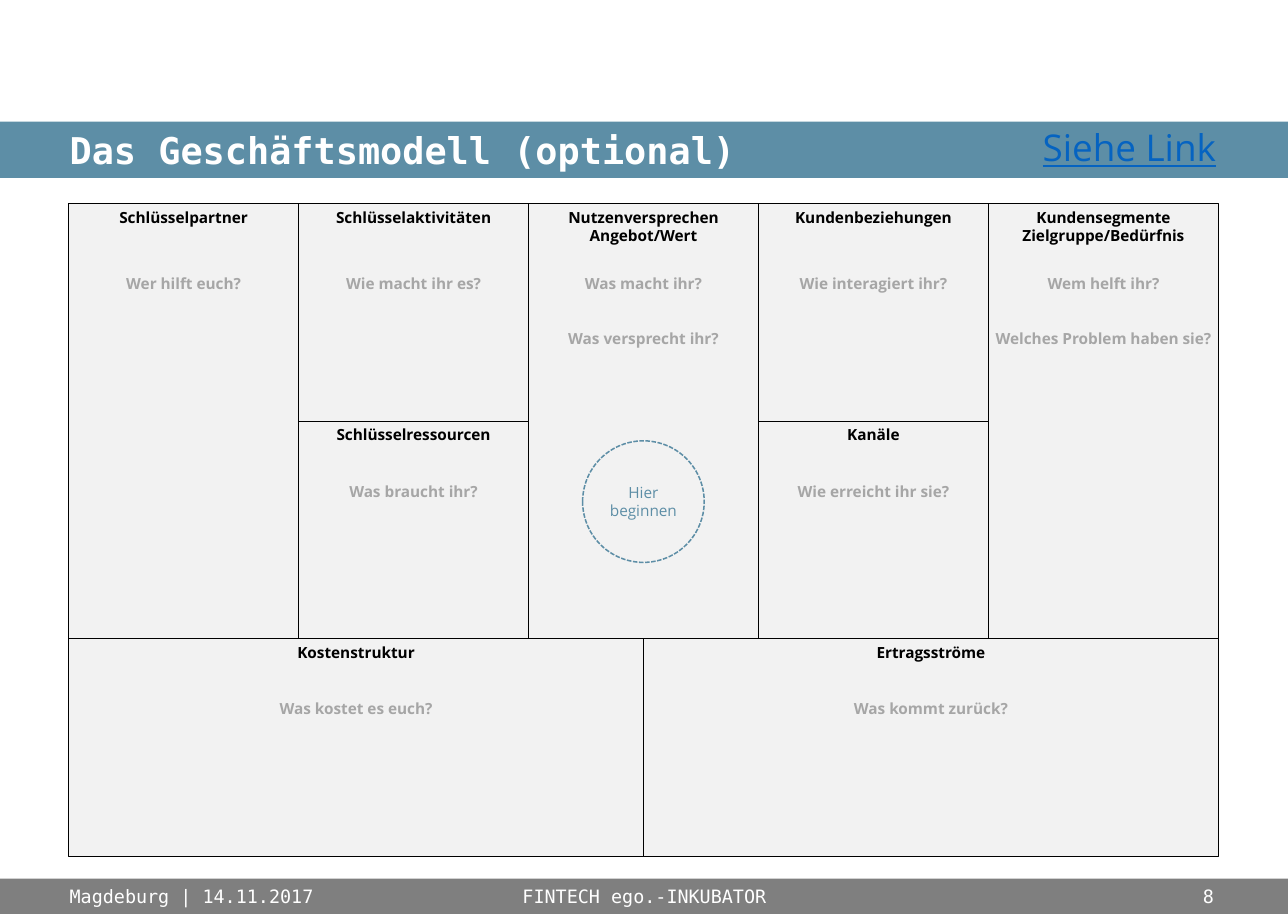
from dataclasses import dataclass
from pptx import Presentation
from pptx.dml.color import RGBColor
from pptx.enum.dml import MSO_LINE
from pptx.enum.shapes import MSO_SHAPE
from pptx.enum.text import MSO_ANCHOR, PP_ALIGN
from pptx.util import Inches, Pt

TITLE = "Das Geschäftsmodell (optional)"
LINK = "Siehe Link"
START = "Hier beginnen"
FOOTER = [
    ("Magdeburg | 14.11.2017", 0.63, 2.71, PP_ALIGN.LEFT),
    ("FINTECH ego.-INKUBATOR", 4.26, 3.14, PP_ALIGN.CENTER),
    ("8", 10.2, 0.78, PP_ALIGN.RIGHT),
]
# column, row, column span, row span, headings, prompts
CANVAS = [
    (0, 0, 1, 2, ["Schlüsselpartner"], ["Wer hilft euch?"]),
    (1, 0, 1, 1, ["Schlüsselaktivitäten"], ["Wie macht ihr es?"]),
    (2, 0, 1, 2, ["Nutzenversprechen", "Angebot/Wert"],
     ["Was macht ihr?", "Was versprecht ihr?"]),
    (3, 0, 1, 1, ["Kundenbeziehungen"], ["Wie interagiert ihr?"]),
    (4, 0, 1, 2, ["Kundensegmente", "Zielgruppe/Bedürfnis"],
     ["Wem helft ihr?", "Welches Problem haben sie?"]),
    (1, 1, 1, 1, ["Schlüsselressourcen"], ["Was braucht ihr?"]),
    (3, 1, 1, 1, ["Kanäle"], ["Wie erreicht ihr sie?"]),
    (0, 2, 2.5, 1, ["Kostenstruktur"], ["Was kostet es euch?"]),
    (2.5, 2, 2.5, 1, ["Ertragsströme"], ["Was kommt zurück?"]),
]


@dataclass(frozen=True)
class Theme:
    mono: str = "DejaVu Sans Mono"
    sans: str = "Open Sans"
    blue: str = "5D8EA6"
    gray: str = "7F7F7F"
    panel: str = "F2F2F2"
    prompt: str = "A6A6A6"
    link: str = "0563C1"
    black: str = "000000"
    white: str = "FFFFFF"
    large: int = 24
    medium: int = 12
    small: int = 10


T = Theme()
W, H = 11.65, 8.27
LEFT, TOP, COL, ROW = 0.62, 1.84, 2.08, 1.97
BAR_TOP, BAR_H = 1.1, 0.51
FOOT_H = 0.32
PAD, PROMPT_H, CIRCLE = 0.04, 0.98, 1.1

prs = Presentation()
prs.slide_width, prs.slide_height = Inches(W), Inches(H)
s = prs.slides.add_slide(prs.slide_layouts[6])


def box(at, fill=None, line=None, width=0.5, shape=MSO_SHAPE.RECTANGLE):
    sp = s.shapes.add_shape(shape, *map(Inches, at))
    sp.shadow.inherit = False
    if fill:
        sp.fill.solid()
        sp.fill.fore_color.rgb = RGBColor.from_string(fill)
    else:
        sp.fill.background()
    if line:
        sp.line.color.rgb = RGBColor.from_string(line)
        sp.line.width = Pt(width)
    else:
        sp.line.fill.background()
    return sp


def label(at):
    return s.shapes.add_textbox(*map(Inches, at))


def write(sp, lines, color, size, name, align=PP_ALIGN.CENTER, anchor=MSO_ANCHOR.TOP,
          insets=(0, 0, 0, 0), spacing=None, gap=0, **style):
    tf = sp.text_frame
    tf.word_wrap = True
    tf.vertical_anchor = anchor
    for side, inset in zip(("left", "top", "right", "bottom"), insets):
        setattr(tf, f"margin_{side}", Inches(inset))
    for i, line in enumerate(lines):
        p = tf.add_paragraph() if i else tf.paragraphs[0]
        p.alignment = align
        if spacing:
            p.line_spacing = Pt(spacing)
        if i and gap:
            p.space_before = Pt(gap)
        r = p.add_run()
        r.text = line
        r.font.color.rgb = RGBColor.from_string(color)
        for key, value in {"size": Pt(size), "name": name, **style}.items():
            setattr(r.font, key, value)


box((0, H - FOOT_H, W, FOOT_H), T.gray)
write(box((0, BAR_TOP, W, BAR_H), T.blue), [TITLE], T.white, T.large, T.mono,
      PP_ALIGN.LEFT, MSO_ANCHOR.MIDDLE, (0.63, 0, 0, 0), bold=True)
for text, x, w, align in FOOTER:
    write(label((x, H - FOOT_H, w, FOOT_H)), [text], T.white, T.medium, T.mono,
          align, MSO_ANCHOR.MIDDLE)

body = {"size": T.small, "name": T.sans, "spacing": 12}
panel = {**body, "insets": (PAD,) * 4, "bold": True}
for col, row, cols, rows, headings, prompts in CANVAS:
    x, y, w = LEFT + col * COL, TOP + row * ROW, cols * COL
    write(box((x, y, w, rows * ROW), T.panel, T.black), headings, T.black, **panel)
    drop = 0.51 if row else 0.6
    write(label((x, y + drop, w, PROMPT_H)), prompts, T.prompt, gap=24, **panel)

circle = box((LEFT + 2.5 * COL - CIRCLE / 2, TOP + 1.37 * ROW - CIRCLE / 2, CIRCLE, CIRCLE),
             line=T.blue, width=1, shape=MSO_SHAPE.OVAL)
circle.line.dash_style = MSO_LINE.SQUARE_DOT
write(circle, [START], T.blue, anchor=MSO_ANCHOR.MIDDLE, **body)
write(label((9.21, BAR_TOP, 2.01, BAR_H)), [LINK], T.link, T.large, T.sans,
      spacing=31, underline=True)

prs.save("out.pptx")
